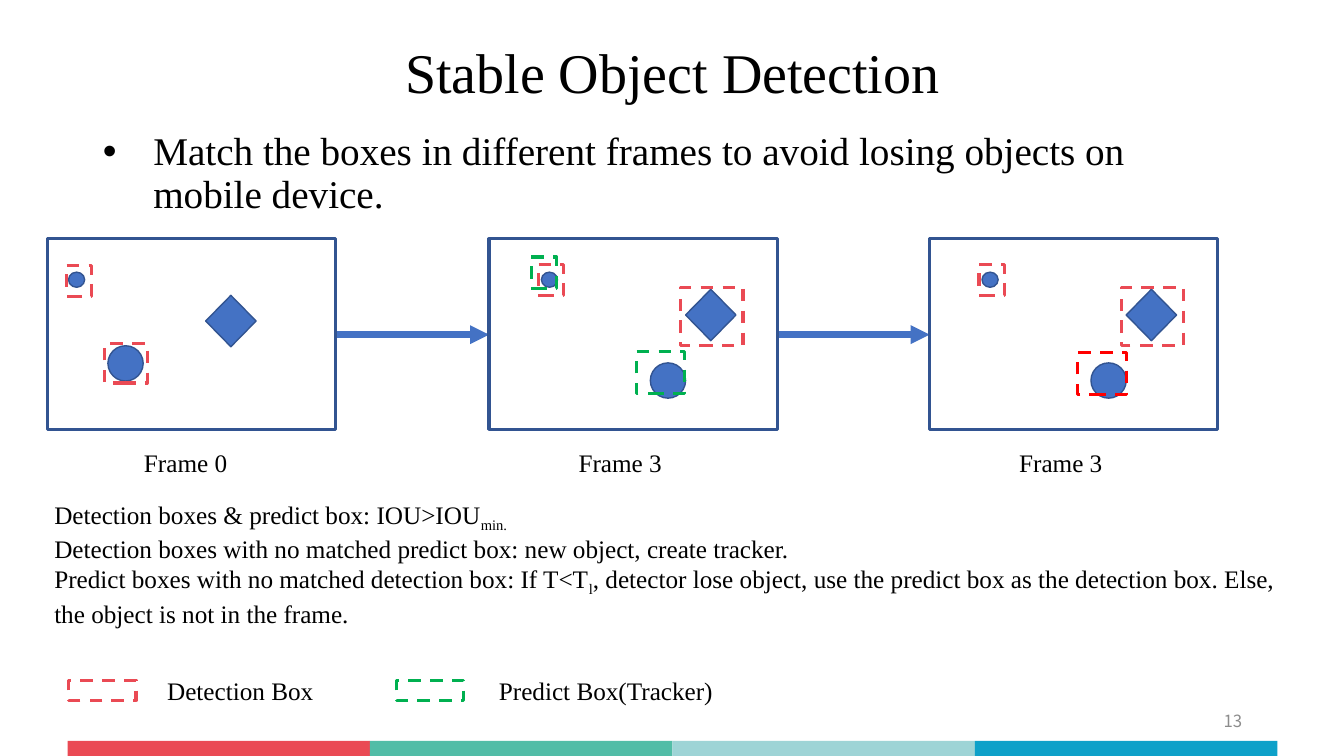
from dataclasses import dataclass

from lxml import etree
from pptx import Presentation
from pptx.dml.color import RGBColor
from pptx.enum import dml, shapes, text
from pptx.oxml import ns
from pptx.util import Inches, Pt


@dataclass(frozen=True)
class Theme:
    font: str = "Times New Roman"
    number_font: str = "Noto Sans CJK SC"
    ink: str = "000000"
    muted: str = "8C8C8C"
    object_fill: str = "4472C4"
    outline: str = "325491"
    detection: str = "EA4A54"
    predict: str = "00B050"
    kept: str = "FF0000"
    strip: tuple = ("EA4A54", "52BDA7", "9ED4D6", "0EA1C9")
    title_size: float = 40
    body_size: float = 28
    text_size: float = 18
    number_size: float = 12


class SlideBuilder:
    def __init__(self, slide, theme):
        self.slide = slide
        self.theme = theme

    def add_run(self, paragraph, words, size, color=None, font=None, subscript=False):
        run = paragraph.add_run()
        run.text = words
        run.font.size = Pt(size)
        run.font.name = font or self.theme.font
        run.font.color.rgb = RGBColor.from_string(color or self.theme.ink)
        if subscript:
            run.font._element.set("baseline", "-25000")

    def fill_placeholder(self, placeholder, box, words, size, anchor, alignment):
        placeholder.left, placeholder.top, placeholder.width, placeholder.height = map(Inches, box)
        frame = placeholder.text_frame
        frame.word_wrap = True
        frame.auto_size = text.MSO_AUTO_SIZE.NONE
        frame.vertical_anchor = anchor
        paragraph = frame.paragraphs[0]
        paragraph.alignment = alignment
        paragraph.line_spacing = 0.9
        paragraph.space_before = Pt(0)
        self.add_run(paragraph, words, size)
        return paragraph

    def add_bullet(self, paragraph, indent):
        properties = paragraph._p.get_or_add_pPr()
        properties.set("marL", str(Inches(indent)))
        properties.set("indent", str(-Inches(indent)))
        bullet_font = etree.SubElement(properties, ns.qn("a:buFont"))
        bullet_font.set("typeface", "Arial")
        bullet = etree.SubElement(properties, ns.qn("a:buChar"))
        bullet.set("char", "•")

    def add_text(self, box, paragraphs, wrap=False):
        """Each paragraph is a list of (words, is_subscript) pairs."""
        frame = self.slide.shapes.add_textbox(*map(Inches, box)).text_frame
        frame.word_wrap = wrap
        for index, runs in enumerate(paragraphs):
            paragraph = frame.add_paragraph() if index else frame.paragraphs[0]
            for words, subscript in runs:
                self.add_run(paragraph, words, self.theme.text_size, subscript=subscript)

    def add_label(self, left, top, width, words):
        self.add_text((left, top, width, 0.4), [[(words, False)]])

    def add_number(self, box, words):
        frame = self.slide.shapes.add_textbox(*map(Inches, box)).text_frame
        frame.word_wrap = True
        frame.vertical_anchor = text.MSO_ANCHOR.MIDDLE
        paragraph = frame.paragraphs[0]
        paragraph.alignment = text.PP_ALIGN.RIGHT
        self.add_run(paragraph, words, self.theme.number_size,
                     self.theme.muted, self.theme.number_font)

    def add_shape(self, kind, box, fill=None, line=None, width=2.25, dashed=False):
        shape = self.slide.shapes.add_shape(kind, *map(Inches, box))
        shape.shadow.inherit = False
        if fill:
            shape.fill.solid()
            shape.fill.fore_color.rgb = RGBColor.from_string(fill)
        else:
            shape.fill.background()
        if line:
            shape.line.color.rgb = RGBColor.from_string(line)
            shape.line.width = Pt(width)
            if dashed:
                shape.line.dash_style = dml.MSO_LINE.DASH
        else:
            shape.line.fill.background()

    def add_object(self, kind, box):
        self.add_shape(kind, box, self.theme.object_fill, self.theme.outline, 1)

    def add_dashed_box(self, box, color):
        self.add_shape(shapes.MSO_SHAPE.RECTANGLE, box, line=color, dashed=True)

    def add_arrow(self, start, end, y):
        arrow = self.slide.shapes.add_connector(
            shapes.MSO_CONNECTOR.STRAIGHT, Inches(start), Inches(y), Inches(end), Inches(y))
        arrow.line.color.rgb = RGBColor.from_string(self.theme.object_fill)
        arrow.line.width = Pt(4.5)
        head = etree.SubElement(arrow.line._get_or_add_ln(), ns.qn("a:tailEnd"))
        head.set("type", "triangle")
        etree.SubElement(arrow._element.spPr, ns.qn("a:effectLst"))

    def add_frame(self, left, label, label_offset, small, ball, diamond, boxes):
        """Objects and boxes are placed from the left edge of the frame."""
        kinds = shapes.MSO_SHAPE
        self.add_shape(kinds.RECTANGLE, (left, FRAME_TOP, FRAME_WIDTH, FRAME_HEIGHT),
                       line=self.theme.outline)
        for kind, (x, y), size in ((kinds.OVAL, small, (0.16, 0.15)),
                                   (kinds.OVAL, ball, (0.35, 0.35)),
                                   (kinds.DIAMOND, diamond, (0.5, 0.51))):
            self.add_object(kind, (left + x, y, *size))
        for (x, *rest), color in boxes:
            self.add_dashed_box((left + x, *rest), color)
        self.add_label(left + label_offset, 4.39, 1.04, label)


FRAME_LEFTS = (0.47, 4.85, 9.22)
FRAME_TOP, FRAME_WIDTH, FRAME_HEIGHT = 2.37, 2.86, 1.89


def main():
    theme = Theme()
    presentation = Presentation()
    presentation.slide_width = Inches(13.33)
    presentation.slide_height = Inches(7.5)
    slide = presentation.slides.add_slide(presentation.slide_layouts[1])
    builder = SlideBuilder(slide, theme)

    # Title and statement
    builder.fill_placeholder(slide.shapes.title, (0.92, 0.4, 11.5, 0.7),
                             "Stable Object Detection", theme.title_size,
                             text.MSO_ANCHOR.MIDDLE, text.PP_ALIGN.CENTER)
    statement = builder.fill_placeholder(
        slide.placeholders[1], (0.92, 1.26, 11.45, 0.84),
        "Match the boxes in different frames to avoid losing objects on mobile device.",
        theme.body_size, text.MSO_ANCHOR.TOP, text.PP_ALIGN.LEFT)
    builder.add_bullet(statement, 0.5)

    # Colour strip and slide number
    for index, color in enumerate(theme.strip):
        builder.add_shape(shapes.MSO_SHAPE.RECTANGLE, (0.67 + 3 * index, 7.35, 3, 0.15), color)
    builder.add_number((9.42, 6.95, 3, 0.4), "13")

    # Arrows between frames
    for start, end in zip(FRAME_LEFTS, FRAME_LEFTS[1:]):
        builder.add_arrow(start + FRAME_WIDTH, end, 3.32)

    # Frames with their objects and boxes
    builder.add_frame(FRAME_LEFTS[0], "Frame 0", 0.86, (0.21, 2.7), (0.6, 3.43), (1.57, 2.93),
                      [((0.19, 2.63, 0.25, 0.31), theme.detection),
                       ((0.57, 3.41, 0.42, 0.39), theme.detection)])
    later_objects = ((0.52, 2.7), (1.6, 3.6), (1.95, 2.87))
    later_detections = [((0.49, 2.62, 0.25, 0.31), theme.detection),
                        ((1.9, 2.85, 0.62, 0.58), theme.detection)]
    later_predictions = (
        [((0.42, 2.55, 0.25, 0.31), theme.predict), ((1.46, 3.49, 0.48, 0.41), theme.predict)],
        [((1.47, 3.5, 0.48, 0.41), theme.kept)],
    )
    for left, predictions in zip(FRAME_LEFTS[1:], later_predictions):
        builder.add_frame(left, "Frame 3", 0.79, *later_objects, later_detections + predictions)

    # Matching rules
    builder.add_text((0.44, 4.9, 12.46, 1.62), [
        [("Detection boxes & predict box: IOU>IOU", False), ("min.", True)],
        [("Detection boxes with no matched predict box: new object, create tracker.", False)],
        [("Predict boxes with no matched detection box: If T<T", False), ("l", True),
         (", detector lose object, use the predict box as the detection box. "
          "Else, the object is not in the frame.", False)],
    ], wrap=True)

    # Legend
    for left, color, label_left, width, label in (
            (0.68, theme.detection, 1.56, 1.67, "Detection Box"),
            (3.93, theme.predict, 4.85, 2.35, "Predict Box(Tracker)")):
        builder.add_dashed_box((left, 6.75, 0.67, 0.2), color)
        builder.add_label(label_left, 6.65, width, label)

    presentation.save("out.pptx")


if __name__ == "__main__":
    main()
